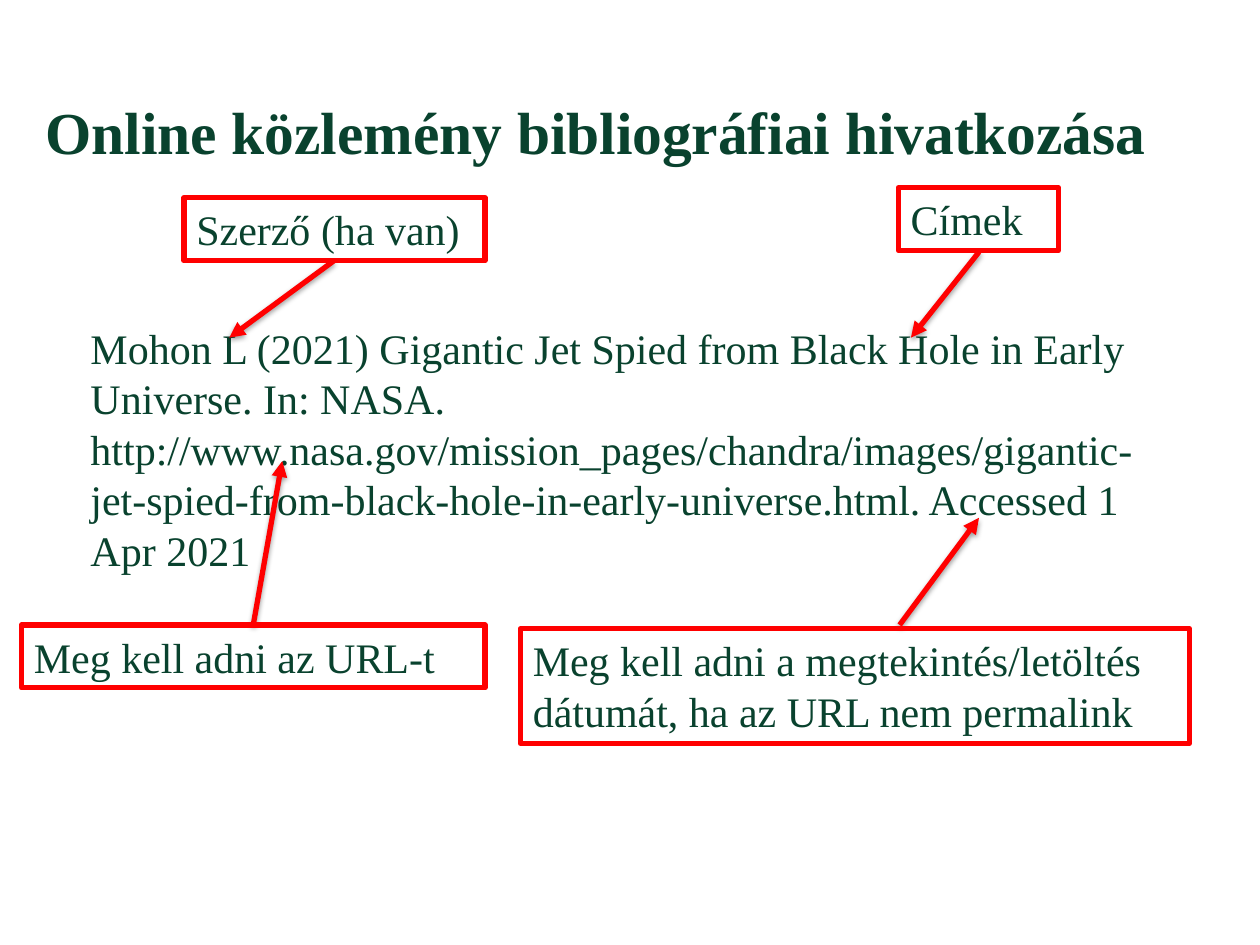
from collections import namedtuple

from lxml import etree
from pptx import Presentation
from pptx import util as u
from pptx.dml import color
from pptx.enum import shapes, text
from pptx.oxml import ns

COLUMNS, ROWS = 10, 7.5
CELL = u.Inches(1)
GREEN, RED = "09422E", "FF0000"
FONT = "Times New Roman"
Box = namedtuple("Box", "left top width height")

CITATION = (
    "Mohon L (2021) Gigantic Jet Spied from Black Hole in Early Universe. In: NASA. "
    "http://www.nasa.gov/mission_pages/chandra/images/"
    "gigantic-jet-spied-from-black-hole-in-early-universe.html. Accessed 1 Apr 2021"
)
CALLOUTS = [
    ("Szerző (ha van)", Box(1.46, 1.57, 2.39, 0.5), (2.65, 2.07), (1.82, 2.68)),
    ("Címek", Box(7.13, 1.49, 1.27, 0.5), (7.77, 2), (7.23, 2.68)),
    ("Meg kell adni az URL-t", Box(0.17, 4.96, 3.68, 0.5), (2.01, 4.96), (2.24, 3.66)),
    ("Meg kell adni a megtekintés/letöltés dátumát, ha az URL nem permalink",
     Box(4.13, 4.99, 5.31, 0.91), (7.14, 4.96), (7.77, 4.11)),
]


def rgb(value):
    """Turn a hex string into a colour."""
    return color.RGBColor.from_string(value)


def cells(*counts):
    """Turn counts of grid cells into slide lengths."""
    return [round(count * CELL) for count in counts]


def write(shape, words, size=24, bold=False, anchor=text.MSO_ANCHOR.TOP):
    """Fill a shape with one left-aligned paragraph."""
    frame = shape.text_frame
    frame.word_wrap = True
    frame.vertical_anchor = anchor
    frame.auto_size = text.MSO_AUTO_SIZE.NONE
    para = frame.paragraphs[0]
    para.text = words
    para.alignment = text.PP_ALIGN.LEFT
    para.font.name = FONT
    para.font.size = u.Pt(size)
    para.font.bold = bold
    para.font.color.rgb = rgb(GREEN)


def outline(line):
    """Give a line the red callout stroke."""
    line.color.rgb = rgb(RED)
    line.width = u.Pt(3)


def add_title(page, box, words):
    """Place the slide title in the box."""
    title = page.shapes.title
    title.left, title.top, title.width, title.height = cells(*box)
    write(title, words, 34, True, text.MSO_ANCHOR.MIDDLE)


def add_citation(page, box, words):
    """Place the sample reference in the box."""
    write(page.shapes.add_textbox(*cells(*box)), words)


def add_arrow(page, start, tip):
    """Draw a red arrow with a soft shadow."""
    arrow = page.shapes.add_connector(shapes.MSO_CONNECTOR.STRAIGHT, *cells(*start, *tip))
    outline(arrow.line)
    etree.SubElement(arrow.line._get_or_add_ln(), ns.qn("a:tailEnd"), type="triangle")
    properties = arrow._element.spPr
    effects = etree.SubElement(properties, ns.qn("a:effectLst"))
    shadow = etree.SubElement(
        effects, ns.qn("a:outerShdw"), blurRad=str(u.Pt(3.1)), dist=str(u.Pt(1.6)),
        dir="5400000", rotWithShape="0")
    tint = etree.SubElement(shadow, ns.qn("a:srgbClr"), val="000000")
    etree.SubElement(tint, ns.qn("a:alpha"), val="38000")


def add_callout(page, words, box, start, tip):
    """Place a framed label and the arrow that leads from it."""
    add_arrow(page, start, tip)
    label = page.shapes.add_shape(shapes.MSO_SHAPE.RECTANGLE, *cells(*box))
    label.shadow.inherit = False
    label.fill.background()
    outline(label.line)
    write(label, words)


def main():
    """Build and save the slide."""
    deck = Presentation()
    deck.slide_width, deck.slide_height = cells(COLUMNS, ROWS)
    page = deck.slides.add_slide(deck.slide_layouts[5])
    add_title(page, Box(0.26, 0.58, 9.41, 0.92), "Online közlemény bibliográfiai hivatkozása")
    add_citation(page, Box(0.62, 2.51, 8.76, 2.2), CITATION)
    for callout in CALLOUTS:
        add_callout(page, *callout)
    deck.save("out.pptx")


if __name__ == "__main__":
    main()
